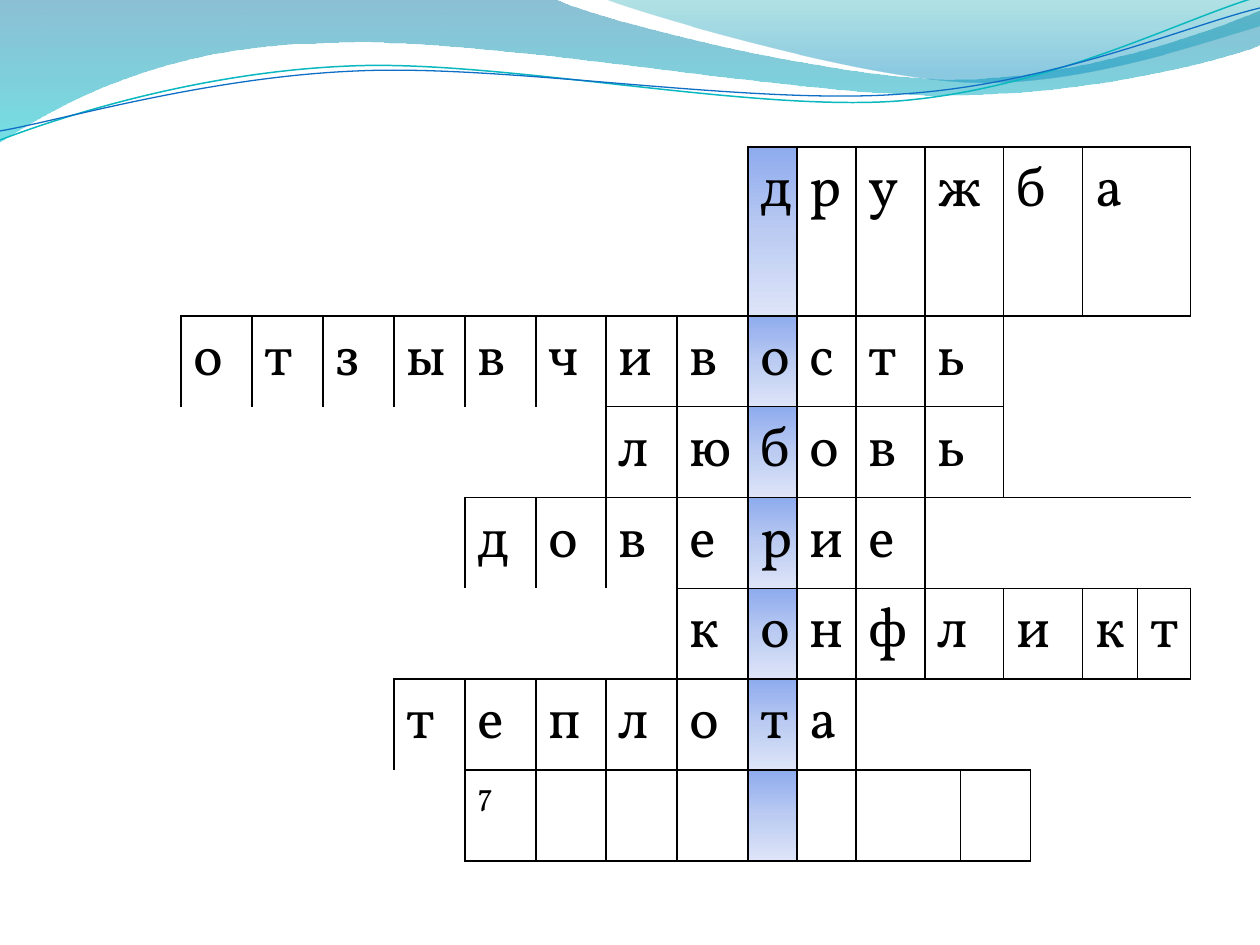
from lxml.etree import SubElement
from pptx import Presentation
from pptx.dml.color import RGBColor
from pptx.oxml.ns import qn
from pptx.util import Emu, Pt

COLORS = {
    "ink": "000000", "teal": "0AB8BF", "blue": "0F6FC6",
    "deep": "0074A1", "aqua": "00C6CF", "sea": "00A1A9", "sky": "008BBF",
    "key_top": "8EABEE", "key_middle": "BBCBF2", "key_bottom": "DEE5F8",
}
BACK_WAVE = [(0, "deep", 45), (100, "aqua", 55)]
FRONT_WAVE = [(0, "sea", 30), (80, "sky", 45)]
KEY_FILL = [(0, "key_top", 100), (50, "key_middle", 100), (100, "key_bottom", 100)]

BACK_OUTLINE = [
    [(0, 0)], [(554, -1)],
    [(600, 21), (837, 79), (955, 79)], [(1075, 79), (1207, 33), (1260, 11)],
    [(1261, 45)],
    [(1239, 55), (1096, 96), (940, 95)], [(784, 95), (481, 35), (324, 43)],
    [(163, 45), (58, 105), (-1, 142)], [(0, 0)],
]
FRONT_OUTLINE = [
    [(604, -1)], [(641, 14), (859, 78), (969, 82)],
    [(1079, 87), (1211, 40), (1260, 26)], [(1260, 0)], [(604, -1)],
]
TEAL_CURVE = [
    [(0, 140)], [(60, 117), (199, 72), (349, 66)],
    [(498, 59), (747, 112), (898, 101)], [(1049, 89), (1182, 19), (1257, -3)],
]
BLUE_CURVE = [
    [(0, 131)], [(59, 121), (207, 77), (357, 71)],
    [(508, 64), (752, 106), (903, 94)], [(1053, 84), (1186, 26), (1260, 8)],
]

COLUMN_WIDTHS = [142, 71, 71, 71, 71, 71, 70, 71, 71, 49, 59, 69, 36, 43, 27, 52, 55, 53]
ROW_HEIGHTS = [169] + [88] * 5 + [91]
KEY_COLUMN = 9
WIDE_COLUMNS = {12: 2, 14: 2}
WORDS = [
    (9, "дружба", {16: 2}),
    (1, "отзывчивость", {}),
    (7, "любовь", {}),
    (5, "доверие", {}),
    (8, "конфликт", {}),
    (4, "теплота", {}),
    (5, "7       ", {11: 2, 13: 2}),
]
RIGHT_BLANKS = [(1, 14, 2, "LT"), (3, 12, 1, "LTB"), (5, 11, 1, "LTB"), (6, 15, 1, "L")]


class SlideBuilder:
    scale = 914400 / 126
    font = "Vollkorn"

    def __init__(self, presentation):
        presentation.slide_width = self.px(1260)
        presentation.slide_height = self.px(945)
        self.slide = presentation.slides.add_slide(presentation.slide_layouts[6])

    def px(self, length):
        return Emu(round(length * self.scale))

    def color(self, name):
        return RGBColor.from_string(COLORS[name])

    def gradient(self, parent, stops):
        fill = SubElement(parent, qn("a:gradFill"), rotWithShape="1")
        stop_list = SubElement(fill, qn("a:gsLst"))
        for position, name, opacity in stops:
            stop = SubElement(stop_list, qn("a:gs"), pos=str(position * 1000))
            color = SubElement(stop, qn("a:srgbClr"), val=COLORS[name])
            if opacity < 100:
                SubElement(color, qn("a:alpha"), val=str(opacity * 1000))
        SubElement(fill, qn("a:lin"), ang="5400000", scaled="0")

    def freeform(self, segments, close):
        points = [(self.px(x), self.px(y)) for segment in segments for x, y in segment]
        builder = self.slide.shapes.build_freeform(*points[0])
        builder.add_line_segments(points[1:], close=close)
        shape = builder.convert_to_shape()
        shape.shadow.inherit = False
        lines = iter(list(shape._element.iter(qn("a:lnTo"))))
        for segment in segments[1:]:
            group = [next(lines) for _ in segment]
            if len(group) == 3:
                bezier = SubElement(group[0].getparent(), qn("a:cubicBezTo"))
                group[0].addprevious(bezier)
                for line in group:
                    bezier.append(line[0])
                    line.getparent().remove(line)
        return shape

    def wave(self, segments, stops):
        shape = self.freeform(segments, True)
        shape.line.fill.background()
        properties = shape._element.spPr
        self.gradient(properties, stops)
        properties.find(qn("a:custGeom")).addnext(properties.find(qn("a:gradFill")))

    def curve(self, segments, color, width):
        shape = self.freeform(segments, False)
        shape.fill.background()
        shape.line.color.rgb = self.color(color)
        shape.line.width = Pt(width)

    def table(self, left, top, widths, heights):
        frame = self.slide.shapes.add_table(
            len(heights), len(widths), self.px(left), self.px(top),
            self.px(sum(widths)), self.px(sum(heights)))
        table = frame.table
        table.first_row = table.horz_banding = False
        for column, width in zip(table.columns, widths):
            column.width = self.px(width)
        for row, height in zip(table.rows, heights):
            row.height = self.px(height)
        return table

    def borders(self, cell, sides):
        properties = cell._tc.get_or_add_tcPr()
        for side in "LRTB":
            line = SubElement(properties, qn("a:ln" + side), w=str(Pt(1)))
            if side in sides:
                fill = SubElement(line, qn("a:solidFill"))
                SubElement(fill, qn("a:srgbClr"), val=COLORS["ink"])
            else:
                SubElement(line, qn("a:noFill"))

    def cell(self, table, row, column, row_span=1, column_span=1, sides="LRTB", letter="", stops=None):
        origin = table.cell(row, column)
        if row_span * column_span > 1:
            origin.merge(table.cell(row + row_span - 1, column + column_span - 1))
        for covered_row in range(row, row + row_span):
            for covered_column in range(column, column + column_span):
                covered = table.cell(covered_row, covered_column)
                self.borders(covered, sides)
                if stops:
                    self.gradient(covered._tc.tcPr, stops)
                else:
                    covered.fill.background()
        if letter.strip():
            run = origin.text_frame.paragraphs[0].add_run()
            run.text = letter
            run.font.name = self.font
            run.font.size = Pt(18 if letter.isdigit() else 32)
            run.font.color.rgb = self.color("ink")


def main():
    presentation = Presentation()
    builder = SlideBuilder(presentation)

    builder.wave(BACK_OUTLINE, BACK_WAVE)
    builder.wave(FRONT_OUTLINE, FRONT_WAVE)
    builder.curve(TEAL_CURVE, "teal", 0.85)
    builder.curve(BLUE_CURVE, "blue", 0.75)

    crossword = builder.table(39, 147, COLUMN_WIDTHS, ROW_HEIGHTS)
    for row, (start, word, wide_columns) in enumerate(WORDS):
        builder.cell(crossword, row, 0, column_span=start, sides="R")
        spans = {**WIDE_COLUMNS, **wide_columns}
        column = start
        for letter in word:
            span = spans.get(column, 1)
            stops = KEY_FILL if column == KEY_COLUMN else None
            builder.cell(crossword, row, column, column_span=span, letter=letter, stops=stops)
            column += span
    for row, column, row_span, sides in RIGHT_BLANKS:
        builder.cell(crossword, row, column, row_span, len(COLUMN_WIDTHS) - column, sides)

    presentation.save("out.pptx")


if __name__ == "__main__":
    main()
